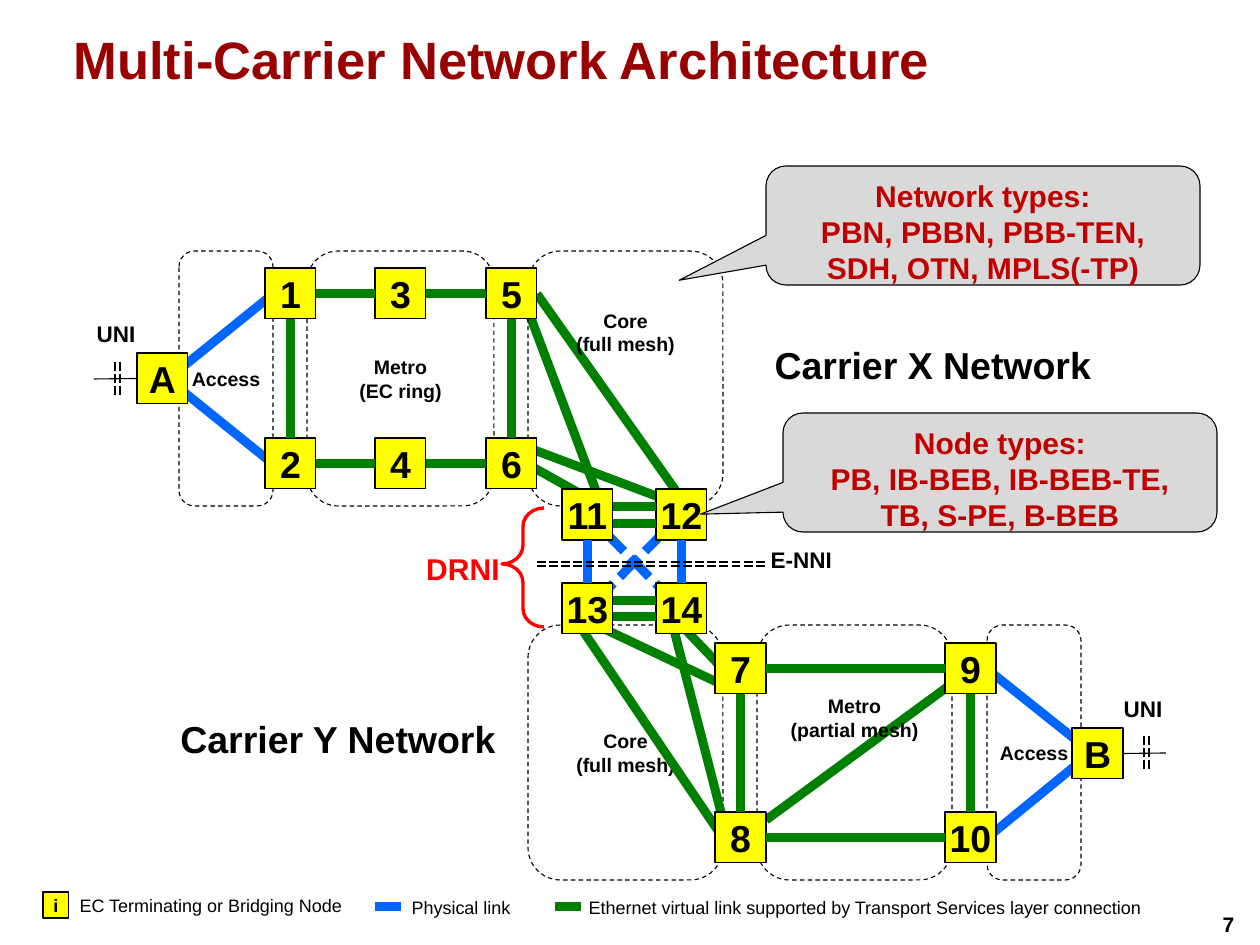
import pptx
import pptx.util
import pptx.dml.color
import pptx.enum.dml
import pptx.enum.shapes
import pptx.enum.text
import pptx.oxml

PX = 914400 / 108
SHAPE = pptx.enum.shapes.MSO_SHAPE
DASH = pptx.enum.dml.MSO_LINE
ALIGN = pptx.enum.text.PP_ALIGN
ANCHOR = pptx.enum.text.MSO_ANCHOR
color = pptx.dml.color.RGBColor.from_string
BLACK, BLUE, GREEN, YELLOW, RED = "000000", "0066FF", "008000", "FFFF00", "FF0000"

presentation = pptx.Presentation()
presentation.slide_width = round(1260 * PX)
presentation.slide_height = round(945 * PX)
slide = presentation.slides.add_slide(presentation.slide_layouts[6])


def add_box(kind, box, text, size, text_color=BLACK, fill=None, line=BLACK, bold=True,
            align=ALIGN.CENTER, anchor=ANCHOR.MIDDLE, wrap=False):
    box = [round(length * PX) for length in box]
    if kind is None:
        shape = slide.shapes.add_textbox(*box)
    else:
        shape = slide.shapes.add_shape(kind, *box)
        shape.shadow.inherit = False
        shape.line.color.rgb = color(line)
        shape.line.width = pptx.util.Pt(0.75)
        if fill:
            shape.fill.solid()
            shape.fill.fore_color.rgb = color(fill)
        else:
            shape.fill.background()
    frame = shape.text_frame
    frame.word_wrap = wrap
    frame.vertical_anchor = anchor
    frame.text = text
    for paragraph in frame.paragraphs:
        paragraph.alignment = align
        paragraph.font.name = "Arial"
        paragraph.font.size = pptx.util.Pt(size)
        paragraph.font.bold = bold
        paragraph.font.color.rgb = color(text_color)
    return shape


def add_line(points, line_color, width=6, dash=None):
    connector = slide.shapes.add_connector(
        pptx.enum.shapes.MSO_CONNECTOR.STRAIGHT, *[round(length * PX) for length in points])
    connector.line.color.rgb = color(line_color)
    connector.line.width = pptx.util.Pt(width)
    if dash:
        connector.line.dash_style = dash
    connector._element.spPr.append(pptx.oxml.parse_xml(
        '<a:effectLst xmlns:a="http://schemas.openxmlformats.org/drawingml/2006/main"/>'))
    return connector


regions = [
    ((528, 625, 195, 255), "Core\n(full mesh)", 0),
    ((179, 251, 94, 255), "Access", 0),
    ((528, 251, 195, 255), "Core\n(full mesh)", 93),
    ((307, 251, 187, 255), "Metro\n(EC ring)", 0),
    ((987, 625, 94, 255), "Access", 0),
    ((757, 625, 195, 255), "Metro\n(partial mesh)", 70),
]
diagonal_links = [
    ((605, 532, 664, 592), BLUE, DASH.SQUARE_DOT),
    ((664, 532, 605, 592), BLUE, DASH.SQUARE_DOT),
    ((950, 685, 766, 820), GREEN, None),
    ((596, 625, 723, 685), GREEN, None),
    ((673, 626, 723, 820), GREEN, None),
    ((664, 499, 529, 448), GREEN, None),
    ((588, 498, 529, 465), GREEN, None),
    ((681, 498, 537, 294), GREEN, None),
    ((596, 491, 529, 313), GREEN, None),
    ((723, 669, 681, 625), GREEN, None),
    ((723, 838, 579, 625), GREEN, None),
    ((179, 370, 273, 294), BLUE, None),
    ((179, 388, 273, 464), BLUE, None),
    ((1081, 744, 987, 669), BLUE, None),
    ((1081, 761, 987, 838), BLUE, None),
]
for index, (box, text, bottom) in enumerate(regions):
    region = add_box(SHAPE.ROUNDED_RECTANGLE, box, text, 13)
    region.line.dash_style = DASH.DASH
    region.text_frame.margin_bottom = round((5 + bottom) * PX)
    if index == 0:
        for points, link_color, dash in diagonal_links:
            add_line(points, link_color, dash=dash)

node_places = {
    "A": (137, 353), "1": (265, 268), "2": (265, 438), "3": (375, 268),
    "4": (375, 438), "5": (486, 268), "6": (486, 438), "11": (562, 489),
    "12": (656, 489), "13": (562, 583), "14": (656, 583), "7": (715, 643),
    "8": (715, 812), "9": (945, 643), "10": (945, 812), "B": (1072, 728),
}
nodes = {}
for name, (left, top) in node_places.items():
    nodes[name] = add_box(SHAPE.RECTANGLE, (left, top, 51, 51), name, 25, fill=YELLOW)

horizontal_links = [("1", "3"), ("3", "5"), ("2", "4"), ("4", "6"), ("7", "9"), ("8", "10")]
vertical_links = [("1", "2"), ("5", "6"), ("7", "8"), ("9", "10"), ("11", "13"), ("12", "14")]
for pairs, begin_side, end_side in [(horizontal_links, 3, 1), (vertical_links, 2, 0)]:
    for begin, end in pairs:
        link = add_line((0, 0, 0, 0), BLUE if begin in ("11", "12") else GREEN)
        link.begin_connect(nodes[begin], begin_side)
        link.end_connect(nodes[end], end_side)
for y in (507, 524, 601, 617):
    add_line((613, y, 656, y), GREEN)

for name, side, x, y, marks in [("A", 1, 94, 379, (115, 120)), ("B", 3, 1166, 753, (1144, 1149))]:
    add_line((x, y, x, y), BLACK, 0.75).end_connect(nodes[name], side)
    for mark in marks:
        add_line((mark, y - 17, mark, y + 17), BLACK, 0.75, DASH.LONG_DASH)
for y in (562, 566):
    add_line((537, y, 767, y), BLACK, 0.75, DASH.LONG_DASH)

brace = add_box(SHAPE.LEFT_BRACE, (502, 508, 42, 119), "", 12, line=RED)
brace.line.width = pptx.util.Pt(2.25)
brace.adjustments[0] = 0.44
brace.adjustments[1] = 0.47

callouts = [
    ((783, 413, 434, 119), "Node types:\nPB, IB-BEB, IB-BEB-TE,\nTB, S-PE, B-BEB", (-0.69, 0.35)),
    ((766, 166, 434, 119), "Network types:\nPBN, PBBN, PBB-TEN,\nSDH, OTN, MPLS(-TP)", (-0.7, 0.46)),
]
for box, text, tip in callouts:
    callout = add_box(SHAPE.ROUNDED_RECTANGULAR_CALLOUT, box, text, 20, "C00000", "D9D9D9",
                      anchor=ANCHOR.TOP, wrap=True)
    callout.adjustments[0], callout.adjustments[1] = tip

add_box(SHAPE.RECTANGLE, (43, 892, 26, 26), "i", 12, fill=YELLOW)
add_line((375, 907, 401, 907), BLUE)
add_line((555, 907, 581, 907), GREEN)

labels = [
    ((63, 22, 1134, 120), "Multi-Carrier Network Architecture", 35, "990000", True, ALIGN.LEFT),
    ((764, 337, 341, 56), "Carrier X Network", 25, BLACK, True, ALIGN.LEFT),
    ((166, 711, 340, 56), "Carrier Y Network", 25, BLACK, True, ALIGN.RIGHT),
    ((760, 541, 84, 38), "E-NNI", 15, BLACK, True, ALIGN.LEFT),
    ((86, 315, 60, 38), "UNI", 15, BLACK, True, ALIGN.LEFT),
    ((1113, 690, 60, 38), "UNI", 15, BLACK, True, ALIGN.LEFT),
    ((415, 545, 96, 48), "DRNI", 20, RED, True, ALIGN.CENTER),
    ((69, 889, 286, 32), "EC Terminating or Bridging Node", 12, BLACK, False, ALIGN.LEFT),
    ((401, 891, 121, 32), "Physical link", 12, BLACK, False, ALIGN.LEFT),
    ((578, 891, 588, 32), "Ethernet virtual link supported by Transport Services layer connection",
     12, BLACK, False, ALIGN.LEFT),
    ((1212, 906, 48, 37), "7", 14, BLACK, True, ALIGN.LEFT),
]
for box, text, size, text_color, bold, align in labels:
    add_box(None, box, text, size, text_color, bold=bold, align=align, anchor=ANCHOR.TOP)

presentation.save("out.pptx")
